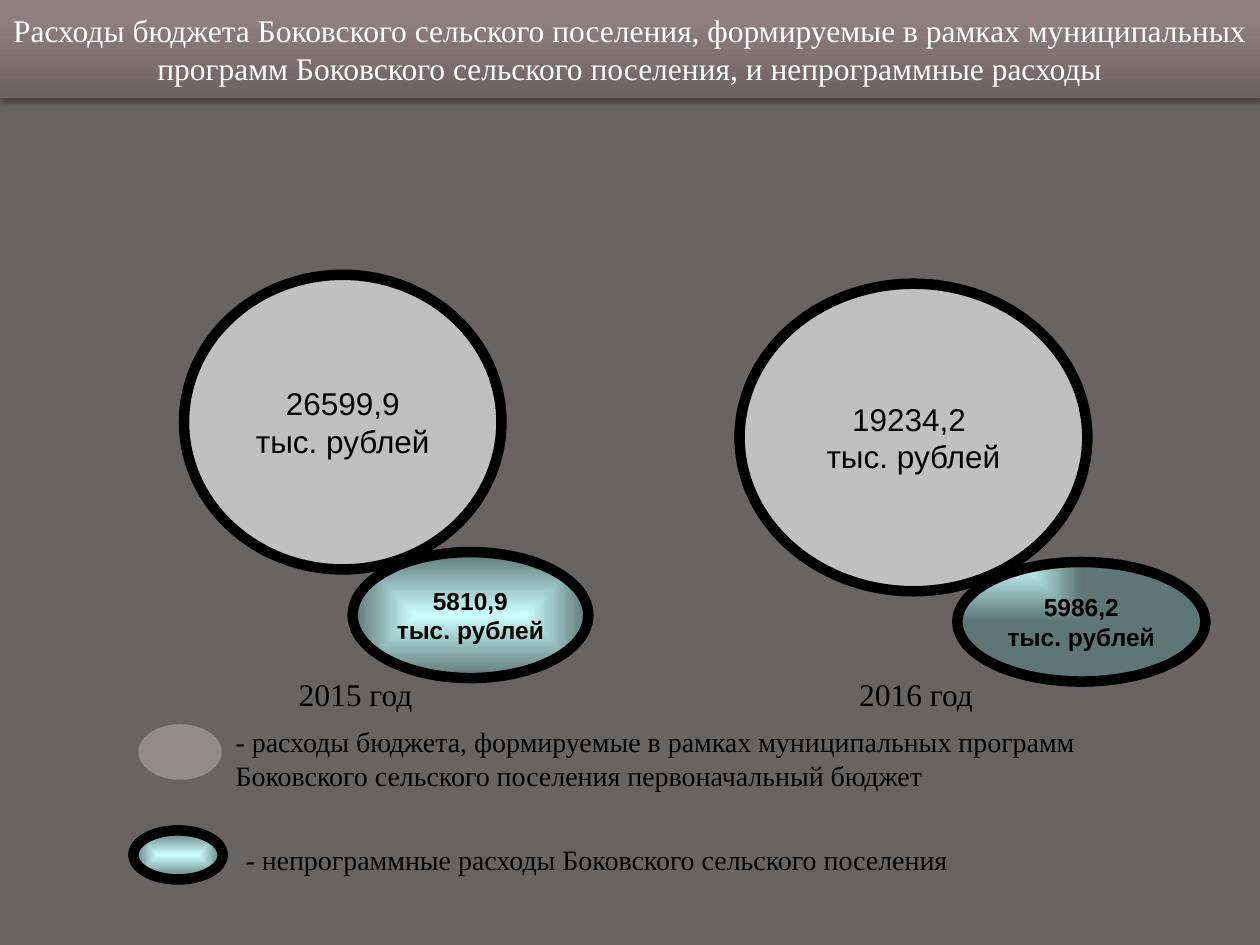
from lxml import etree
from pptx import Presentation
from pptx.dml.color import RGBColor
from pptx.enum.shapes import MSO_SHAPE
from pptx.enum.text import MSO_ANCHOR, MSO_AUTO_SIZE, PP_ALIGN
from pptx.oxml import parse_xml
from pptx.oxml.ns import qn
from pptx.util import Cm, Pt

OVAL = MSO_SHAPE.OVAL
MIDDLE = MSO_ANCHOR.MIDDLE
CENTER = PP_ALIGN.CENTER
NO_AUTOFIT = MSO_AUTO_SIZE.NONE
NAMESPACE = 'xmlns:a="http://schemas.openxmlformats.org/drawingml/2006/main"'

SERIF, SANS = "Times New Roman", "Arial"
BLACK, WHITE, SILVER = "000000", "FFFFFF", "C0C0C0"
AQUA_STOPS = [(0, "CCFFFF"), (100, "5E7676")]
TITLE_STOPS = [(0, "6E6162"), (80, "8E7E7F"), (100, "8F7E80")]
UPWARD = '<a:lin ang="16200000" scaled="0"/>'
FROM_CENTER = ('<a:path path="shape"><a:fillToRect l="50000" t="50000" '
               'r="50000" b="50000"/></a:path>')
FROM_CORNER = ('<a:path path="rect"><a:fillToRect r="100000" b="100000"/>'
               '</a:path>')
UNIT = "тыс. рублей"


def color(value):
    return RGBColor.from_string(value)


def place(shape, box):
    shape.left, shape.top, shape.width, shape.height = map(Cm, box)


def fill_gradient(shape, stops, direction):
    """Replace the fill with a gradient running in the given direction."""
    shape.fill.background()
    stop_xml = "".join(
        f'<a:gs pos="{position * 1000}"><a:srgbClr val="{value}"/></a:gs>'
        for position, value in stops)
    gradient = parse_xml(f'<a:gradFill {NAMESPACE} rotWithShape="1">'
                         f'<a:gsLst>{stop_xml}</a:gsLst>{direction}</a:gradFill>')
    properties = shape._element.spPr
    properties.replace(properties.find(qn("a:noFill")), gradient)


def write(shape, lines, font_name, size, text_color=BLACK, bold=False,
          alignment=None):
    frame = shape.text_frame
    frame.text = "\n".join(lines)
    for paragraph in frame.paragraphs:
        paragraph.alignment = alignment
        font = paragraph.font
        font.name, font.size, font.bold = font_name, Pt(size), bold
        font.color.rgb = color(text_color)


def add_title(slide, text):
    title = slide.shapes.title
    place(title, (0, 0, 25.4, 1.98))
    fill_gradient(title, TITLE_STOPS, UPWARD)
    title._element.spPr.append(parse_xml(
        f'<a:effectLst {NAMESPACE}><a:outerShdw blurRad="39370" dist="22860" '
        'dir="5400000" rotWithShape="0"><a:srgbClr val="000000">'
        '<a:alpha val="35000"/></a:srgbClr></a:outerShdw></a:effectLst>'))
    write(title, [text], SERIF, 18, WHITE, alignment=CENTER)
    title.text_frame.auto_size = NO_AUTOFIT
    title.text_frame.word_wrap = True
    title.text_frame.vertical_anchor = MIDDLE


def add_label(slide, box, text, size):
    label = slide.shapes.add_textbox(*map(Cm, box))
    label.text_frame.word_wrap = True
    write(label, [text], SERIF, size)


def add_oval(slide, box, fill=None, direction=None, outlined=True):
    """Add an oval, solid when a fill is given and aqua gradient otherwise."""
    oval = slide.shapes.add_shape(OVAL, *map(Cm, box))
    oval.shadow.inherit = False
    if fill:
        oval.fill.solid()
        oval.fill.fore_color.rgb = color(fill)
    else:
        fill_gradient(oval, AQUA_STOPS, direction)
    if outlined:
        oval.line.color.rgb = color(BLACK)
        oval.line.width = Pt(6)
    else:
        oval.line.fill.background()
    return oval


def add_bubble(slide, box, amount, size, bold=False, **oval_style):
    bubble = add_oval(slide, box, **oval_style)
    write(bubble, [amount, UNIT], SANS, size, bold=bold, alignment=CENTER)
    bubble.text_frame.word_wrap = False
    bubble.text_frame.vertical_anchor = MIDDLE


def main():
    presentation = Presentation()
    presentation.slide_width, presentation.slide_height = Cm(25.4), Cm(19.05)
    slide = presentation.slides.add_slide(presentation.slide_layouts[5])
    slide.background.fill.solid()
    slide.background.fill.fore_color.rgb = color("696464")

    add_title(slide, "Расходы бюджета Боковского сельского поселения, "
                     "формируемые в рамках муниципальных программ Боковского "
                     "сельского поселения, и непрограммные расходы")

    # Legend
    program_key = add_oval(slide, (2.79, 14.6, 1.68, 1.12), fill="BDB5B6",
                           outlined=False)
    key_color = program_key._element.spPr.find(qn("a:solidFill"))[0]
    etree.SubElement(key_color, qn("a:alpha"), val="50000")
    add_label(slide, (4.5, 14.48, 19.61, 1.63),
              "- расходы бюджета, формируемые в рамках муниципальных программ "
              "Боковского сельского поселения первоначальный бюджет", 16)
    add_oval(slide, (2.69, 16.74, 1.8, 0.99), direction=FROM_CENTER)
    add_label(slide, (4.7, 16.87, 17.2, 0.94),
              "- непрограммные расходы Боковского сельского поселения", 16)

    # Years
    for left, year in ((5.77, 2015), (17.07, 2016)):
        add_label(slide, (left, 13.49, 3.96, 1.02), f"{year} год", 18)

    # Program spending
    for box, amount in (((3.71, 5.54, 6.4, 5.94), "26599,9"),
                        ((14.91, 5.72, 7.01, 6.2), "19234,2 ")):
        add_bubble(slide, box, amount, 18, fill=SILVER)

    # Non-program spending
    for box, amount, direction in (
            ((7.11, 11.13, 4.75, 2.54), "5810,9", FROM_CENTER),
            ((19.3, 11.33, 5, 2.41), "5986,2", FROM_CORNER)):
        add_bubble(slide, box, amount, 14, bold=True, direction=direction)

    presentation.save("out.pptx")


if __name__ == "__main__":
    main()
